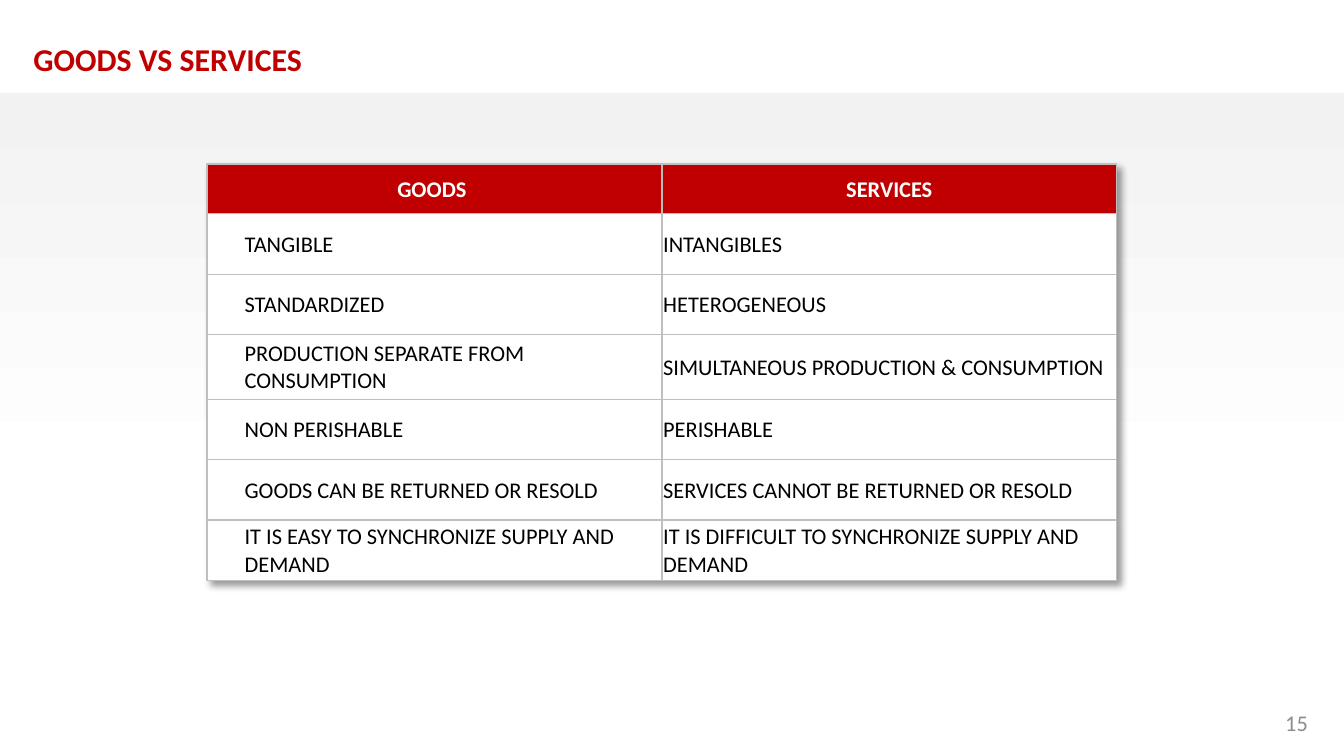
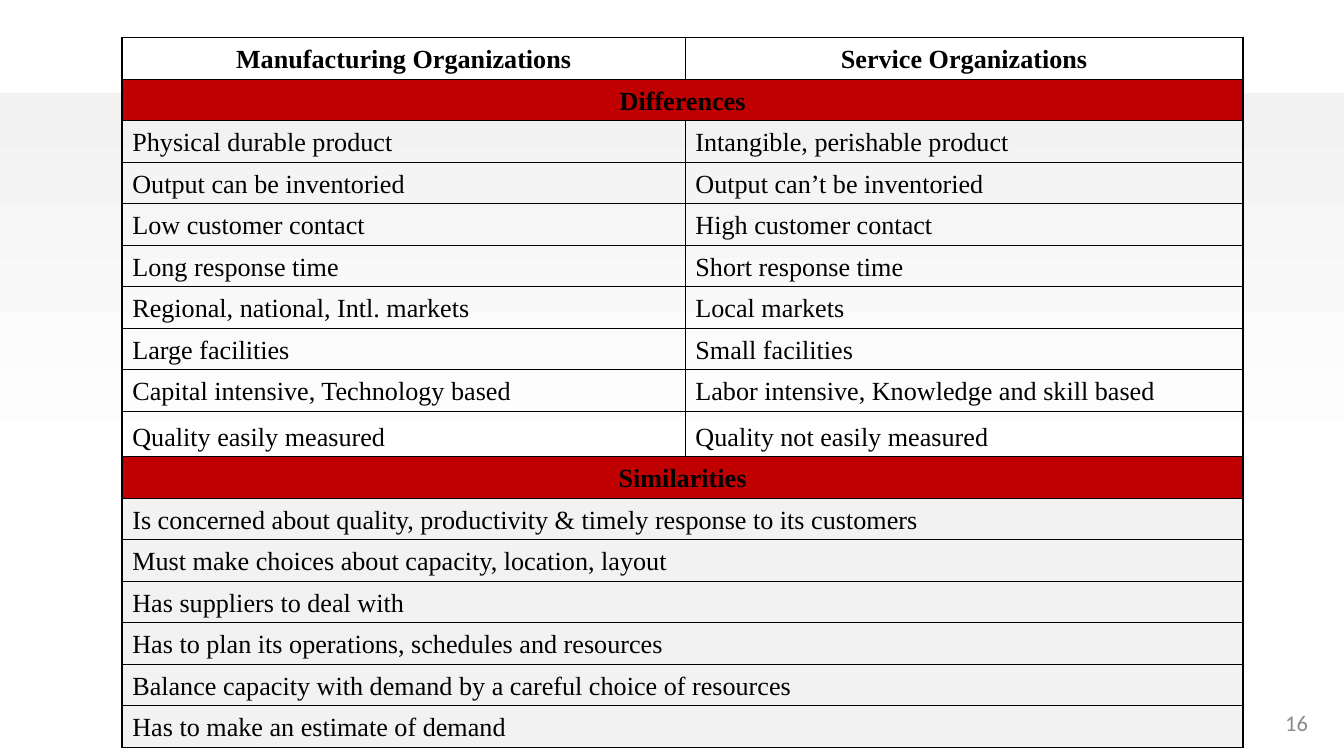
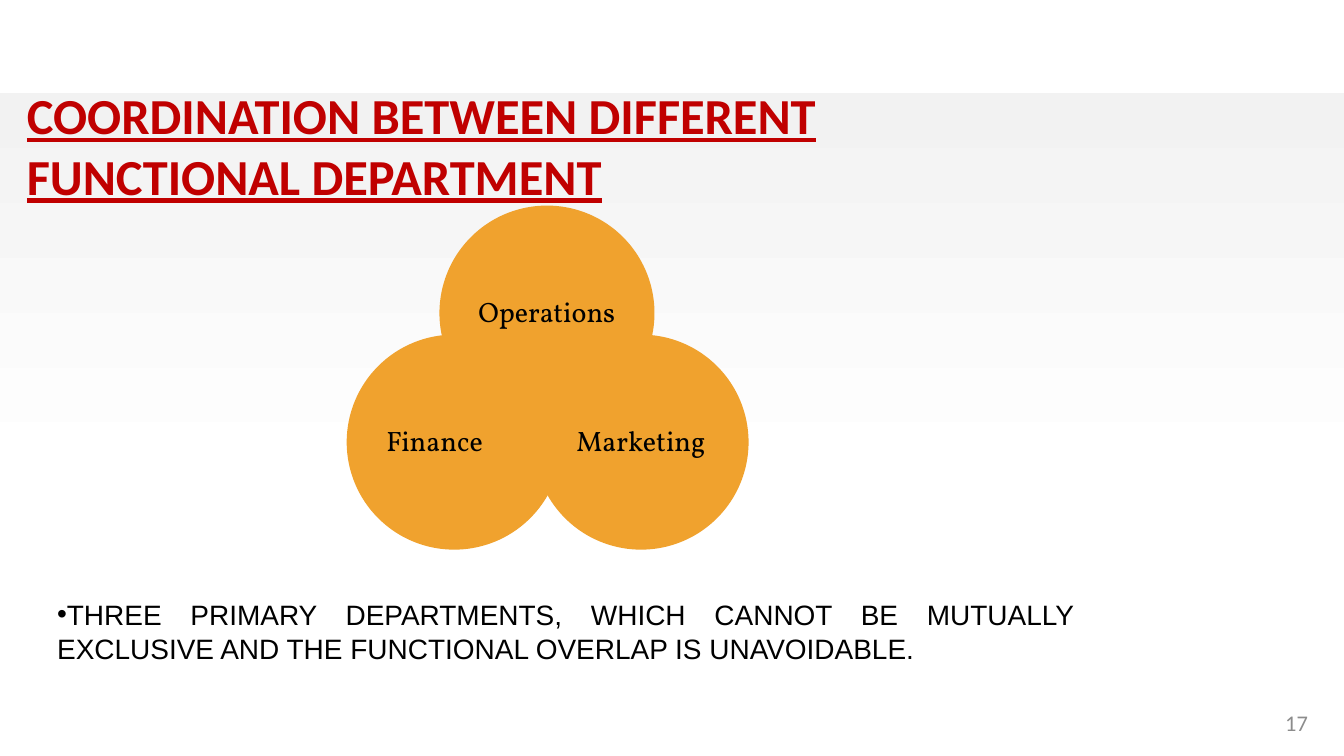
from dataclasses import dataclass

from lxml import etree
from pptx import Presentation
from pptx.dml.color import RGBColor
from pptx.enum.shapes import MSO_SHAPE
from pptx.enum.text import MSO_ANCHOR, MSO_AUTO_SIZE, PP_ALIGN
from pptx.oxml.ns import qn
from pptx.util import Inches, Pt

LEFT, CENTER, RIGHT, JUSTIFY = PP_ALIGN.LEFT, PP_ALIGN.CENTER, PP_ALIGN.RIGHT, PP_ALIGN.JUSTIFY
TOP, MIDDLE, BOTTOM = MSO_ANCHOR.TOP, MSO_ANCHOR.MIDDLE, MSO_ANCHOR.BOTTOM
RECTANGLE, OVAL = MSO_SHAPE.RECTANGLE, MSO_SHAPE.OVAL

# Shared look
RED, ORANGE = "C00000", "F0A22E"
WHITE, BLACK = "FFFFFF", "000000"
PALE_GRAY, RULE_GRAY, NUMBER_GRAY = "F2F2F2", "BFBFBF", "8C8C8C"
SANS, SERIF = "Calibri", "Times New Roman"
SLIDE_WIDTH = 10
SLIDE_HEIGHT = SLIDE_WIDTH * 9 / 16
BAND_LEFT, BAND_TOP = -0.01, 0.69
DEFAULT_INSETS = (0.1, 0.05, 0.1, 0.05)
NARROW_INSETS = tuple(0.75 * inset for inset in DEFAULT_INSETS)


@dataclass
class Box:
    left: float
    top: float
    width: float
    height: float

    def lengths(self) -> tuple:
        return tuple(Inches(v) for v in (self.left, self.top, self.width, self.height))


@dataclass
class Circle:
    label: str
    left: float
    top: float
    right_inset: float = 0


@dataclass
class Rules:
    color: str
    inner: float
    outer: float


GOODS_ROWS = [
    ("GOODS ", "SERVICES"),
    ("TANGIBLE", "INTANGIBLES"),
    ("STANDARDIZED", "HETEROGENEOUS"),
    ("PRODUCTION SEPARATE FROM CONSUMPTION", "SIMULTANEOUS PRODUCTION & CONSUMPTION"),
    ("NON PERISHABLE", "PERISHABLE"),
    ("GOODS CAN BE RETURNED OR RESOLD", "SERVICES CANNOT BE RETURNED OR RESOLD"),
    ("IT IS EASY TO SYNCHRONIZE SUPPLY AND DEMAND",
     "IT IS DIFFICULT TO SYNCHRONIZE SUPPLY AND DEMAND"),
]
GOODS_TABLE_WIDTH = 6.77

# A row with one text spans both columns
ORGANIZATION_ROWS = [
    ("Manufacturing Organizations", "Service Organizations"),
    ("Differences",),
    ("Physical durable product", "Intangible, perishable product"),
    ("Output can be inventoried", "Output can’t be inventoried"),
    ("Low customer contact", "High customer contact"),
    ("Long response time", "Short response time"),
    ("Regional, national, Intl. markets", "Local markets"),
    ("Large facilities", "Small facilities"),
    ("Capital intensive, Technology based", "Labor intensive, Knowledge and skill based"),
    ("Quality easily measured", "Quality not easily measured"),
    ("Similarities",),
    ("Is concerned about quality, productivity & timely response to its customers",),
    ("Must make choices about capacity, location, layout",),
    ("Has suppliers to deal with",),
    ("Has to plan its operations, schedules and resources",),
    ("Balance capacity with demand by a careful choice of resources",),
    ("Has to make an estimate of demand",),
]
SECTION_NAMES = ("Differences", "Similarities")

DEPARTMENT_DIAMETER = 1.6
DEPARTMENTS = [
    Circle("Operations", 3.27, 1.53),
    Circle("Marketing", 3.97, 2.49),
    Circle("Finance", 2.58, 2.49, right_inset=0.29),
]


def rgb(color: str) -> RGBColor:
    return RGBColor.from_string(color)


def write_text(holder, text: str, *, size: float, font: str = SANS, color: str = BLACK,
               bold: bool = False, underline: bool = False, align=LEFT, anchor=TOP,
               insets: tuple = DEFAULT_INSETS, line_spacing: float = 1.0):
    """Fill a text frame or a table cell with one formatted paragraph."""
    holder.margin_left, holder.margin_top, holder.margin_right, holder.margin_bottom = (
        Inches(inset) for inset in insets)
    holder.vertical_anchor = anchor
    frame = getattr(holder, "text_frame", holder)
    paragraph = frame.paragraphs[0]
    paragraph.alignment = align
    paragraph.line_spacing = line_spacing
    run = paragraph.add_run()
    run.text = text
    run.font.size, run.font.name = Pt(size), font
    run.font.bold, run.font.underline = bold, underline
    run.font.color.rgb = rgb(color)
    return paragraph


def add_text(slide, box: Box, text: str, *, wrap: bool = True, **style):
    frame = slide.shapes.add_textbox(*box.lengths()).text_frame
    frame.word_wrap = wrap
    if not wrap:
        frame.auto_size = MSO_AUTO_SIZE.SHAPE_TO_FIT_TEXT
    return write_text(frame, text, **style)


def add_plain_shape(slide, kind, box: Box):
    shape = slide.shapes.add_shape(kind, *box.lengths())
    shape.shadow.inherit = False
    shape.line.fill.background()
    return shape


def add_base_slide(presentation, number: int):
    """Add a slide with the gradient band and its number."""
    slide = presentation.slides.add_slide(presentation.slide_layouts[6])
    band = add_plain_shape(slide, RECTANGLE, Box(
        BAND_LEFT, BAND_TOP, SLIDE_WIDTH - BAND_LEFT, SLIDE_HEIGHT - BAND_TOP))
    band.fill.gradient()
    band.fill.gradient_angle = 270
    for stop, color, position in zip(band.fill.gradient_stops, (PALE_GRAY, WHITE), (0, 0.58)):
        stop.color.rgb = rgb(color)
        stop.position = position
    add_text(slide, Box(7.5, 5.23, 2.33, 0.3), str(number), size=12,
             color=NUMBER_GRAY, align=RIGHT, anchor=MIDDLE)
    return slide


def add_plain_table(slide, left: float, top: float, widths: list, heights: list):
    box = Box(left, top, sum(widths), sum(heights))
    table = slide.shapes.add_table(len(heights), len(widths), *box.lengths()).table
    table.first_row = table.horz_banding = False
    for column, width in zip(table.columns, widths):
        column.width = Inches(width)
    for row, height in zip(table.rows, heights):
        row.height = Inches(height)
    return table


def add_child(parent, tag: str, **attributes):
    return etree.SubElement(parent, qn(tag), {k: str(v) for k, v in attributes.items()})


def set_borders(cell, rules: Rules, outer_sides: dict) -> None:
    properties = cell._tc.get_or_add_tcPr()
    for side in "LRTB":
        width = rules.outer if outer_sides[side] else rules.inner
        line = add_child(properties, f"a:ln{side}", w=Pt(width))
        add_child(add_child(line, "a:solidFill"), "a:srgbClr", val=rules.color)


def fill_table(table, rows: list, rules: Rules, style_cell) -> None:
    """Write all rows; style_cell gives the fill and text format of a cell."""
    last_row, last_column = len(rows) - 1, len(table.columns) - 1
    for row_index, texts in enumerate(rows):
        spanning = len(texts) == 1
        if spanning:
            table.cell(row_index, 0).merge(table.cell(row_index, last_column))
        for column_index, text in enumerate(texts):
            cell = table.cell(row_index, column_index)
            fill, style = style_cell(row_index, column_index, texts)
            write_text(cell, text, **style)
            set_borders(cell, rules, {
                "L": column_index == 0, "R": spanning or column_index == last_column,
                "T": row_index == 0, "B": row_index == last_row})
            if fill:
                cell.fill.solid()
                cell.fill.fore_color.rgb = rgb(fill)
            else:
                cell.fill.background()


def add_table_shadow(table) -> None:
    effects = etree.Element(qn("a:effectLst"))
    shadow = add_child(effects, "a:outerShdw", blurRad=Pt(4), dist=Pt(3),
                       dir=2700000, algn="tl", rotWithShape=0)
    color = add_child(shadow, "a:srgbClr", val=BLACK)
    add_child(color, "a:alpha", val=40000)
    table._tbl.tblPr.insert(0, effects)


def goods_style(row: int, column: int, texts: tuple) -> tuple:
    header = row == 0
    left_inset = 0.28 if column == 0 and not header else 0.01
    return (RED if header else WHITE), dict(
        size=12, bold=header, color=WHITE if header else BLACK,
        align=CENTER if header else LEFT, anchor=MIDDLE, insets=(left_inset, 0.01, 0.01, 0))


def organization_style(row: int, column: int, texts: tuple) -> tuple:
    section = texts[0] in SECTION_NAMES
    heading = row == 0 or section
    fill = RED if section else PALE_GRAY if len(texts) == 1 else None
    return fill, dict(size=14, font=SERIF, bold=heading, align=CENTER if heading else LEFT,
                      anchor=BOTTOM, insets=NARROW_INSETS)


def build_goods_slide(presentation) -> None:
    slide = add_base_slide(presentation, 15)
    add_text(slide, Box(0.15, 0.25, 2.52, 0.39), "GOODS VS SERVICES", wrap=False,
             size=17, color=RED, bold=True)
    heights = [0.37, 0.45, 0.45, 0.48, 0.45, 0.45, 0.45]
    table = add_plain_table(slide, 1.54, 1.22, [GOODS_TABLE_WIDTH / 2] * 2, heights)
    fill_table(table, GOODS_ROWS, Rules(RULE_GRAY, 0.75, 0.75), goods_style)
    add_table_shadow(table)


def build_organizations_slide(presentation) -> None:
    slide = add_base_slide(presentation, 16)
    special_heights = {"Differences": 0.31, "Similarities": 0.31, "Quality easily measured": 0.34}
    heights = [special_heights.get(texts[0], 0.29) for texts in ORGANIZATION_ROWS]
    table = add_plain_table(slide, 0.91, 0.28, [4.19, 4.15], heights)
    fill_table(table, ORGANIZATION_ROWS, Rules(BLACK, 0.5, 1), organization_style)


def build_departments_slide(presentation) -> None:
    slide = add_base_slide(presentation, 17)
    add_text(slide, Box(0.2, 0.57, 7.8, 0.96),
             "COORDINATION BETWEEN DIFFERENT FUNCTIONAL DEPARTMENT", size=27, color=RED,
             bold=True, underline=True, anchor=BOTTOM, insets=(0, 0.05, 0, 0))
    # Overlapping departments
    for department in DEPARTMENTS:
        circle = add_plain_shape(slide, OVAL, Box(
            department.left, department.top, DEPARTMENT_DIAMETER, DEPARTMENT_DIAMETER))
        circle.fill.solid()
        circle.fill.fore_color.rgb = rgb(ORANGE)
        write_text(circle.text_frame, department.label, size=15, font="Vollkorn",
                   align=CENTER, anchor=MIDDLE, line_spacing=0.9,
                   insets=(0, 0, department.right_inset, 0))
    # Bulleted conclusion
    paragraph = add_text(
        slide, Box(0.35, 4.41, 7.72, 0.57),
        "THREE PRIMARY DEPARTMENTS, WHICH CANNOT BE MUTUALLY EXCLUSIVE "
        "AND THE FUNCTIONAL OVERLAP IS UNAVOIDABLE.",
        size=15, font="Arial", align=JUSTIFY, insets=NARROW_INSETS)
    properties = paragraph._p.get_or_add_pPr()
    properties.set("marL", "0")
    properties.set("indent", "0")
    add_child(properties, "a:buFont", typeface="Arial")
    add_child(properties, "a:buChar", char="•")


def main() -> None:
    presentation = Presentation()
    presentation.slide_width = Inches(SLIDE_WIDTH)
    presentation.slide_height = Inches(SLIDE_HEIGHT)
    build_goods_slide(presentation)
    build_organizations_slide(presentation)
    build_departments_slide(presentation)
    presentation.save("out.pptx")


if __name__ == "__main__":
    main()
